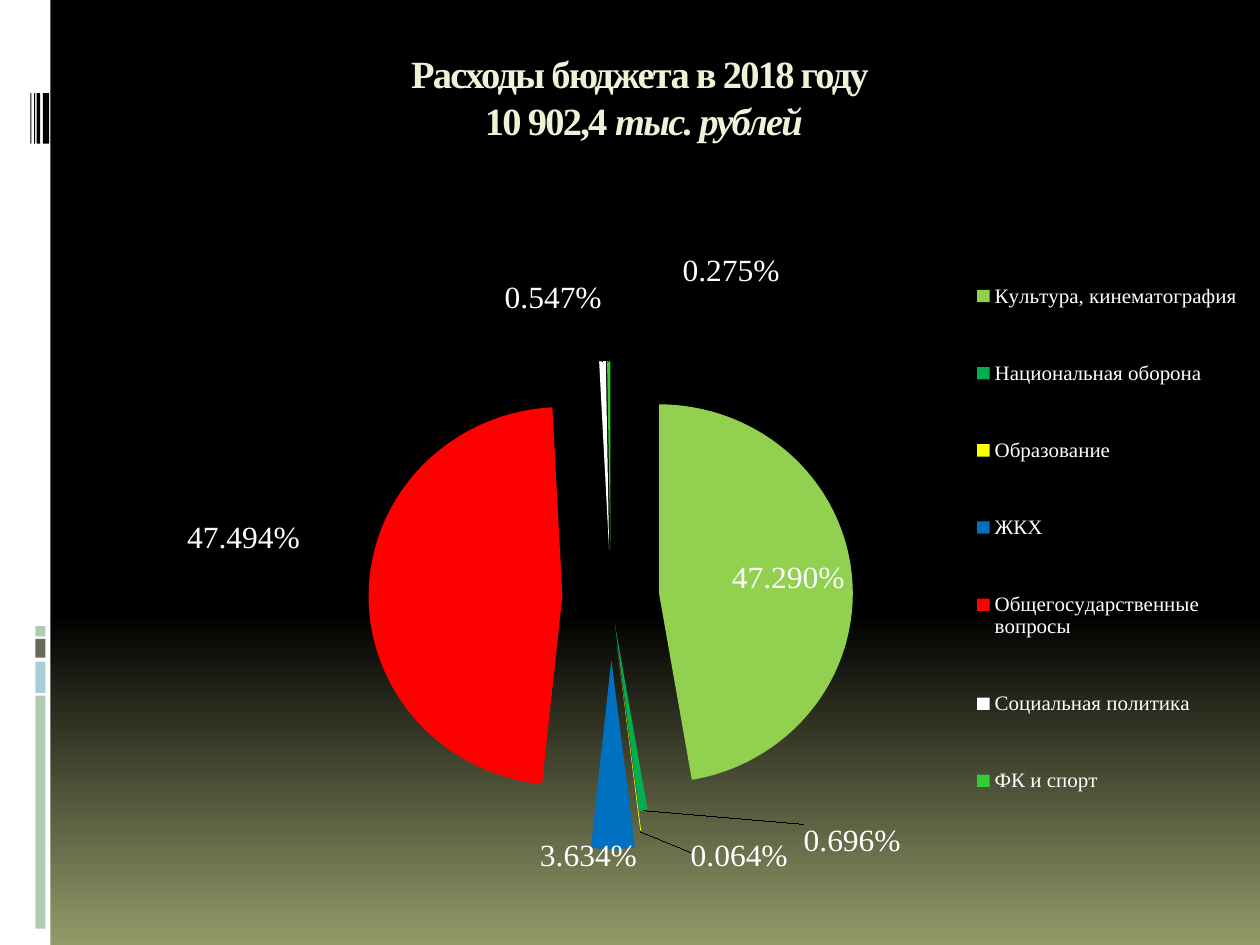
import pptx
import pptx.chart.data
import pptx.dml.color
import pptx.enum.chart
import pptx.enum.shapes
import pptx.enum.text
import pptx.oxml
import pptx.util
from pptx.util import Inches, Pt

COLORS = {
    "black": "000000", "white": "FFFFFF", "olive": "939B69", "cream": "F0F2D7",
    "sage": "B0CCB0", "sky": "A8CDD7", "moss": "676A55",
}
FONT = "Times New Roman"
EXPLOSION = 25
C_NS = 'xmlns:c="http://schemas.openxmlformats.org/drawingml/2006/chart"'


def rgb(value):
    return pptx.dml.color.RGBColor.from_string(value)


def manual_layout(**values):
    """Return a c:layout element; xMode and yMode are factors unless given."""
    items = "".join(f'<c:{k} val="{v}"/>' for k, v in values.items())
    return pptx.oxml.parse_xml(
        f"<c:layout {C_NS}><c:manualLayout>{items}</c:manualLayout></c:layout>")


prs = pptx.Presentation()
prs.slide_width, prs.slide_height = Inches(10), Inches(7.5)
s = prs.slides.add_slide(prs.slide_layouts[5])

# Background
fill = s.background.fill
fill.gradient()
fill.gradient_angle = 270
for stop, (position, color) in zip(fill.gradient_stops, [(0.65, "black"), (1, "olive")]):
    stop.position = position
    stop.color.rgb = rgb(COLORS[color])

# Side strip with its blocks and bars
strip = [
    (0, 0, 0.4, 7.5, "white"),
    (0.28, 5.52, 0.08, 1.85, "sage"),
    (0.28, 5.25, 0.08, 0.25, "sky"),
    (0.28, 5.07, 0.08, 0.15, "moss"),
    (0.28, 4.97, 0.08, 0.08, "sage"),
    (0.34, 0.74, 0.05, 0.4, "black"),
    (0.29, 0.74, 0.03, 0.4, "black"),
    (0.27, 0.74, 0.01, 0.4, "black"),
    (0.24, 0.74, 0.01, 0.4, "black"),
]
for x, y, w, h, color in strip:
    sp = s.shapes.add_shape(pptx.enum.shapes.MSO_SHAPE.RECTANGLE,
                            Inches(x), Inches(y), Inches(w), Inches(h))
    sp.shadow.inherit = False
    sp.fill.solid()
    sp.fill.fore_color.rgb = rgb(COLORS[color])
    sp.line.fill.background()

# Title
title = s.shapes.title
title.left, title.top, title.width, title.height = (
    Inches(0.5), Inches(0.35), Inches(9.22), Inches(0.98))
tf = title.text_frame
tf.word_wrap = True
tf.auto_size = pptx.enum.text.MSO_AUTO_SIZE.NONE
tf.vertical_anchor = pptx.enum.text.MSO_ANCHOR.TOP
p = tf.paragraphs[0]
p.alignment = pptx.enum.text.PP_ALIGN.CENTER
p.font.size, p.font.name, p.font.bold = Pt(22), FONT, True
p.font.color.rgb = rgb(COLORS["cream"])
for i, text in enumerate(["Расходы бюджета в 2018 году ", "10 902,4 ", "тыс. рублей"]):
    if i == 1:
        p.add_line_break()
    r = p.add_run()
    r.text = text
    r.font.italic = True if i == 2 else None
    r.font._element.set("spc", "-100")

# Pie: category, percent, colour, explosion, label shift
slices = [
    ("Культура, кинематография", 47.29, "92D050", EXPLOSION, None),
    ("Национальная оборона", 0.696, "00B050", 14, (0.13, 0.01)),
    ("Образование", 0.064, "FFFF00", EXPLOSION, (0.04, 0.02)),
    ("ЖКХ", 3.634, "0070C0", 33, (-0.02, -0.01)),
    ("Общегосударственные вопросы", 47.494, "FF0000", EXPLOSION, (-0.05, -0.08)),
    ("Социальная политика", 0.547, "FFFFFF", EXPLOSION, (-0.04, -0.06)),
    ("ФК и спорт", 0.275, "33CC33", EXPLOSION, (0.1, -0.1)),
]
data = pptx.chart.data.CategoryChartData()
data.categories = [row[0] for row in slices]
data.add_series("Series 1", [row[1] for row in slices])
chart = s.shapes.add_chart(pptx.enum.chart.XL_CHART_TYPE.PIE, Inches(0.28), Inches(1.72),
                           Inches(9.72), Inches(5.34), data).chart
chart.has_title = False
chart.font.size, chart.font.name = Pt(18), "Cabin"
chart.font.color.rgb = rgb(COLORS["white"])

chart.has_legend = True
legend = chart.legend
legend.position = pptx.enum.chart.XL_LEGEND_POSITION.RIGHT
legend.include_in_layout = False
legend.font.size, legend.font.name = Pt(12), FONT
legend.font.color.rgb = rgb(COLORS["white"])
legend._element.find("{*}legendPos").addnext(
    manual_layout(xMode="edge", yMode="edge", x=0.76, y=0.02, w=0.23, h=0.94))

plot_area = chart._chartSpace.chart.plotArea
for old in plot_area.findall("{*}layout"):
    plot_area.remove(old)
plot_area.insert(0, manual_layout(layoutTarget="inner", xMode="edge", yMode="edge",
                                  x=0.05, y=0.22, w=0.84, h=0.72))

series = chart.plots[0].series[0]
series.format.line.fill.background()
series._element.find("{*}spPr").addnext(
    pptx.oxml.parse_xml(f'<c:explosion {C_NS} val="{EXPLOSION}"/>'))
labels = series.data_labels
labels.show_percentage, labels.show_value = True, False
labels.number_format, labels.number_format_is_linked = "0.000%", False
labels.font.size, labels.font.name = Pt(18), FONT
labels.font.color.rgb = rgb(COLORS["white"])
labels._element.find("{*}showLeaderLines").set("val", "1")

position = pptx.enum.chart.XL_LABEL_POSITION
for i, (_, _, color, explosion, shift) in enumerate(slices):
    point = series.points[i]
    point.format.fill.solid()
    point.format.fill.fore_color.rgb = rgb(color)
    point.format.line.fill.background()
    if explosion != EXPLOSION:
        point.format.fill._xPr.addprevious(
            pptx.oxml.parse_xml(f'<c:explosion {C_NS} val="{explosion}"/>'))
    label = point.data_label
    label.font.size, label.font.name = Pt(18), FONT
    label.font.color.rgb = rgb(COLORS["white"])
    label.position = position.OUTSIDE_END if shift else position.INSIDE_END
    dlbl = labels._element.findall("{*}dLbl")[i]
    dlbl.find("{*}showPercent").set("val", "1")
    dlbl.find("{*}showVal").set("val", "0")
    dlbl.find("{*}txPr").addprevious(pptx.oxml.parse_xml(
        f'<c:numFmt {C_NS} formatCode="0.000%" sourceLinked="0"/>'))
    if shift:
        dlbl.find("{*}idx").addnext(manual_layout(x=shift[0], y=shift[1]))

prs.save("out.pptx")
